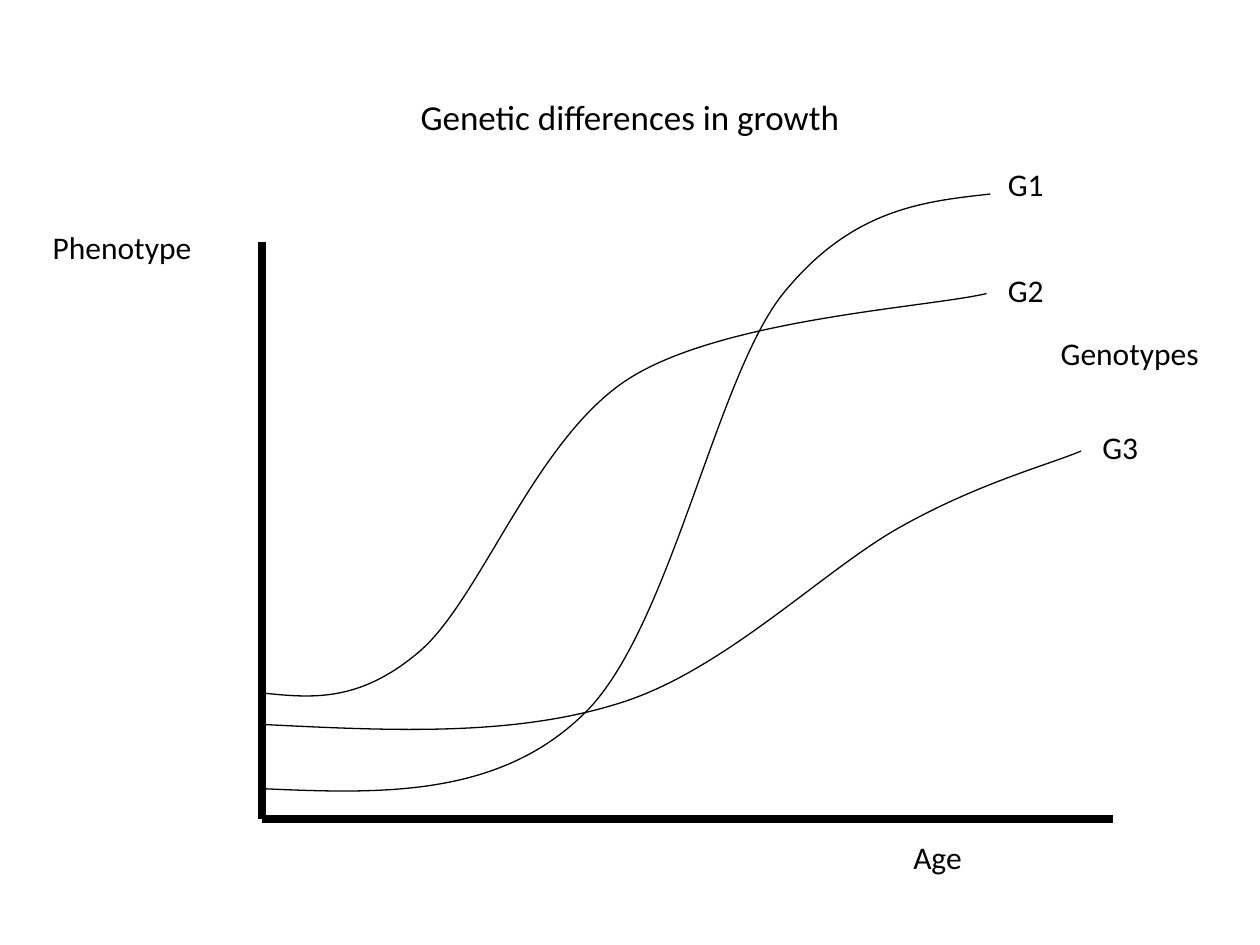
from lxml.etree import SubElement
from pptx import Presentation
from pptx.dml.color import RGBColor
from pptx.enum.shapes import MSO_CONNECTOR
from pptx.enum.text import MSO_ANCHOR, MSO_AUTO_SIZE, PP_ALIGN
from pptx.oxml.ns import qn
from pptx.util import Inches, Pt

BLACK = RGBColor(0x00, 0x00, 0x00)
FONT = "Calibri"
COLUMNS, ROWS = 10, 7.5  # the slide as a grid of one-inch cells
AXIS_X, AXIS_TOP, AXIS_Y, AXIS_RIGHT = 2.08, 1.92, 6.5, 8.83
LABEL_HEIGHT = 0.43

presentation = Presentation()
presentation.slide_width = Inches(COLUMNS)
presentation.slide_height = Inches(ROWS)
slide = presentation.slides.add_slide(presentation.slide_layouts[6])
shapes = slide.shapes


def add_text(text, left, top, width, height, size):
    box = shapes.add_textbox(*map(Inches, (left, top, width, height)))
    paragraph = box.text_frame.paragraphs[0]
    paragraph.text = text
    paragraph.font.name = FONT
    paragraph.font.size = Pt(size)
    paragraph.font.color.rgb = BLACK
    return box.text_frame


def add_curve(start, controls):
    """Draw cubic Bézier segments; controls holds three points per segment."""
    start, *controls = [(Inches(x), Inches(y)) for x, y in (start, *controls)]
    builder = shapes.build_freeform(*start)
    builder.add_line_segments(controls, close=False)
    curve = builder.convert_to_shape()
    curve.shadow.inherit = False
    curve.fill.background()
    curve.line.color.rgb = BLACK
    curve.line.width = Pt(0.75)
    # Gather each three straight segments into one cubic segment.
    outline = next(curve.element.iter(qn("a:path")))
    segments = outline.findall(qn("a:lnTo"))
    for first in range(0, len(segments), 3):
        cubic = SubElement(outline, qn("a:cubicBezTo"))
        for segment in segments[first:first + 3]:
            cubic.append(segment[0])
            outline.remove(segment)


title = add_text("Genetic differences in growth", 0.5, 0.3, COLUMNS - 1, 1.25, 20)
title.word_wrap = True
title.vertical_anchor = MSO_ANCHOR.MIDDLE
title.paragraphs[0].alignment = PP_ALIGN.CENTER

for start, end in [
    ((AXIS_X, AXIS_TOP), (AXIS_X, AXIS_Y)),
    ((AXIS_X, AXIS_Y), (AXIS_RIGHT, AXIS_Y)),
]:
    axis = shapes.add_connector(MSO_CONNECTOR.STRAIGHT, *map(Inches, start + end))
    axis.line.color.rgb = BLACK
    axis.line.width = Pt(4.5)
    SubElement(axis.element.spPr, qn("a:effectLst"))

growth_curves = {
    "G1": [(2.1, 6.26),
           (3.02, 6.3), (3.95, 6.33), (4.63, 5.67),
           (5.31, 5.02), (5.67, 3.04), (6.2, 2.35),
           (6.74, 1.67), (7.3, 1.6), (7.86, 1.54)],
    "G3": [(AXIS_X, 5.75),
           (3.08, 5.8), (4.07, 5.85), (4.92, 5.58),
           (5.76, 5.32), (6.56, 4.5), (7.17, 4.17),
           (7.78, 3.83), (8.35, 3.68), (8.58, 3.58)],
    "G2": [(AXIS_X, 5.5),
           (2.47, 5.54), (2.85, 5.58), (3.33, 5.17),
           (3.82, 4.75), (4.25, 3.47), (5, 3),
           (5.75, 2.53), (7.36, 2.44), (7.83, 2.33)],
}
for start, *controls in growth_curves.values():
    add_curve(start, controls)

labels = [
    ("Phenotype", 0.32, 1.76, 1.53),
    ("Age", 7.15, 6.6, 0.7),
    ("G1", 7.9, 1.26, 0.57),
    ("G2", 7.9, 2.1, 0.57),
    ("G3", 8.65, 3.35, 0.57),
    ("Genotypes", 8.32, 2.6, 1.54),
]
for text, left, top, width in labels:
    label = add_text(text, left, top, width, LABEL_HEIGHT, 18)
    label.word_wrap = False
    label.auto_size = MSO_AUTO_SIZE.SHAPE_TO_FIT_TEXT

presentation.save("out.pptx")
